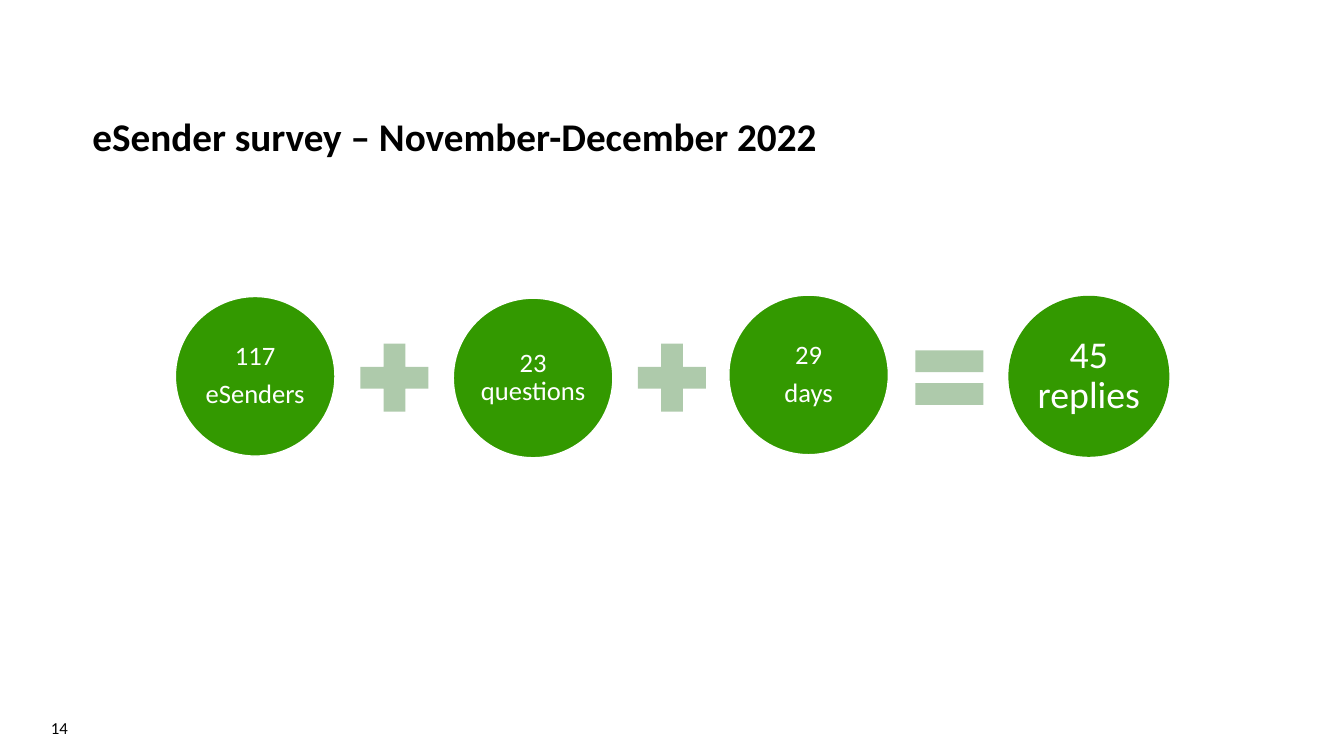
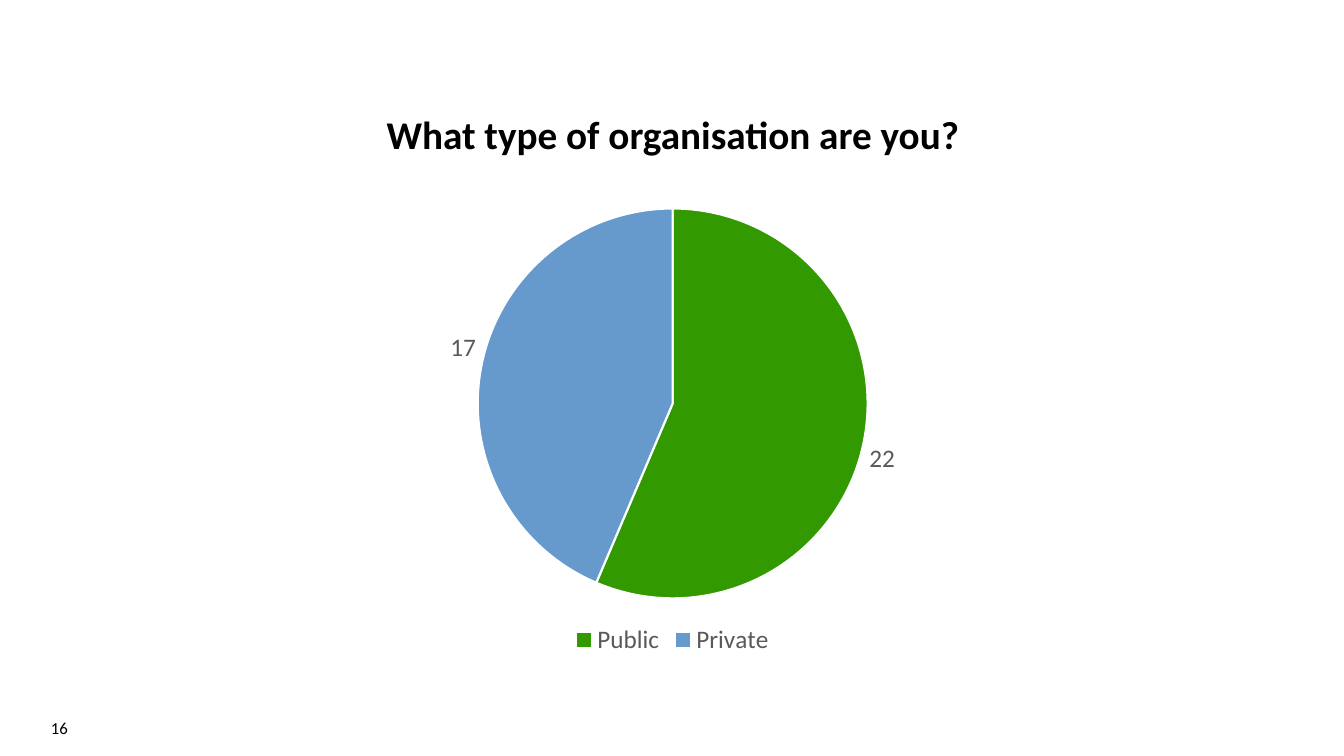
from pptx import Presentation
from pptx.chart.data import CategoryChartData
from pptx.dml.color import RGBColor
from pptx.enum import chart as ch, shapes, text as tx
from pptx.util import Pt

COLORS = {"ink": "000000", "white": "FFFFFF", "green": "339900",
          "sage": "AECAAB", "blue": "6699CC", "gray": "595959"}
FACE = "Calibri"
LEFT, MID, RIGHT = tx.PP_ALIGN.LEFT, tx.PP_ALIGN.CENTER, tx.PP_ALIGN.RIGHT
BALL, SIGN = 114, 66


def tint(name):
    return RGBColor.from_string(COLORS[name])


def style(font, size, color, bold=False):
    font.name, font.size, font.bold = FACE, Pt(size), bold
    font.color.rgb = tint(color)


def write(shape, words, size=12, color="ink", bold=False, align=LEFT,
          anchor=tx.MSO_ANCHOR.MIDDLE, pad=(7.2, 3.6, 7.2, 3.6),
          lead=1.0, gap=0):
    """Fill a shape with text, one paragraph a line; pad is left, top, right, bottom."""
    frame = shape.text_frame
    frame.word_wrap, frame.vertical_anchor = True, anchor
    (frame.margin_left, frame.margin_top,
     frame.margin_right, frame.margin_bottom) = map(Pt, pad)
    for i, line in enumerate(words.split("\n")):
        para = frame.add_paragraph() if i else frame.paragraphs[0]
        para.alignment, para.line_spacing = align, lead
        para.space_after = Pt(gap)
        run = para.add_run()
        run.text = line
        style(run.font, size, color, bold)


def label(slide, box, words, **form):
    write(slide.shapes.add_textbox(*map(Pt, box)), words, **form)


def form(slide, kind, box, fill, line=None):
    shape = slide.shapes.add_shape(kind, *map(Pt, box))
    shape.shadow.inherit = False
    shape.fill.solid()
    shape.fill.fore_color.rgb = tint(fill)
    if line:
        shape.line.color.rgb = tint(line)
        shape.line.width = Pt(1)
    else:
        shape.line.fill.background()
    return shape


def page(deck, title, number, box, align=LEFT):
    """Add a slide with its title and page number."""
    slide = deck.slides.add_slide(deck.slide_layouts[6])
    label(slide, box, title, size=28, bold=True, align=align, lead=0.9,
          anchor=tx.MSO_ANCHOR.BOTTOM, pad=(0, 3.6, 0, 0))
    label(slide, (0, 505.5, 55.5, 28.8), str(number), align=RIGHT)
    return slide


def sum_row(slide, left, top):
    """Draw the survey figures as a sum of circles."""
    balls = [(0, 0, "117\neSenders", 19, "white"),
             (198.5, 1.2, "23 questions", 19, "white"),
             (395.3, -1, "29\ndays", 19, "white"),
             (595.5, 0, "45 replies", 27, "green")]
    for x, y, words, size, line in balls:
        ball = form(slide, shapes.MSO_SHAPE.OVAL,
                    (left + x, top + y, BALL, BALL), "green", line)
        write(ball, words, size=size, color="white", align=MID,
              pad=[size / 9] * 4, lead=0.9, gap=size * 0.35)
    plus, equal = shapes.MSO_SHAPE.MATH_PLUS, shapes.MSO_SHAPE.MATH_EQUAL
    for i, kind in enumerate((plus, plus, equal)):
        form(slide, kind, (left + 123.5 + 198.2 * i,
                           top + (BALL + 2 - SIGN) / 2, SIGN, SIGN), "sage")


def pie(slide, box, counts):
    data = CategoryChartData()
    data.categories = list(counts)
    data.add_series("Series 1", list(counts.values()))
    chart = slide.shapes.add_chart(ch.XL_CHART_TYPE.PIE, *map(Pt, box), data).chart
    style(chart.font, 10, "ink")
    chart.has_title = False
    chart.has_legend = True
    chart.legend.position = ch.XL_LEGEND_POSITION.BOTTOM
    chart.legend.include_in_layout = False
    style(chart.legend.font, 18, "gray")
    plot = chart.plots[0]
    plot.vary_by_categories = True
    for i, color in enumerate(("green", "blue")):
        part = plot.series[0].points[i].format
        part.fill.solid()
        part.fill.fore_color.rgb = tint(color)
        part.line.color.rgb = tint("white")
        part.line.width = Pt(1.5)
    plot.has_data_labels = True
    marks = plot.data_labels
    marks.show_value = True
    marks.position = ch.XL_LABEL_POSITION.OUTSIDE_END
    style(marks.font, 18, "gray")


def main():
    deck = Presentation()
    deck.slide_width, deck.slide_height = Pt(960), Pt(540)
    survey = page(deck, "eSender survey – November-December 2022", 14,
                  (66, 10, 827, 104.5))
    sum_row(survey, 125.3, 211.8)
    kinds = page(deck, "What type of organisation are you?", 16,
                 (67, 18, 827, 95), MID)
    pie(kinds, (67, 139, 827, 332.6), {"Public": 22, "Private": 17})
    deck.save("out.pptx")


if __name__ == "__main__":
    main()
